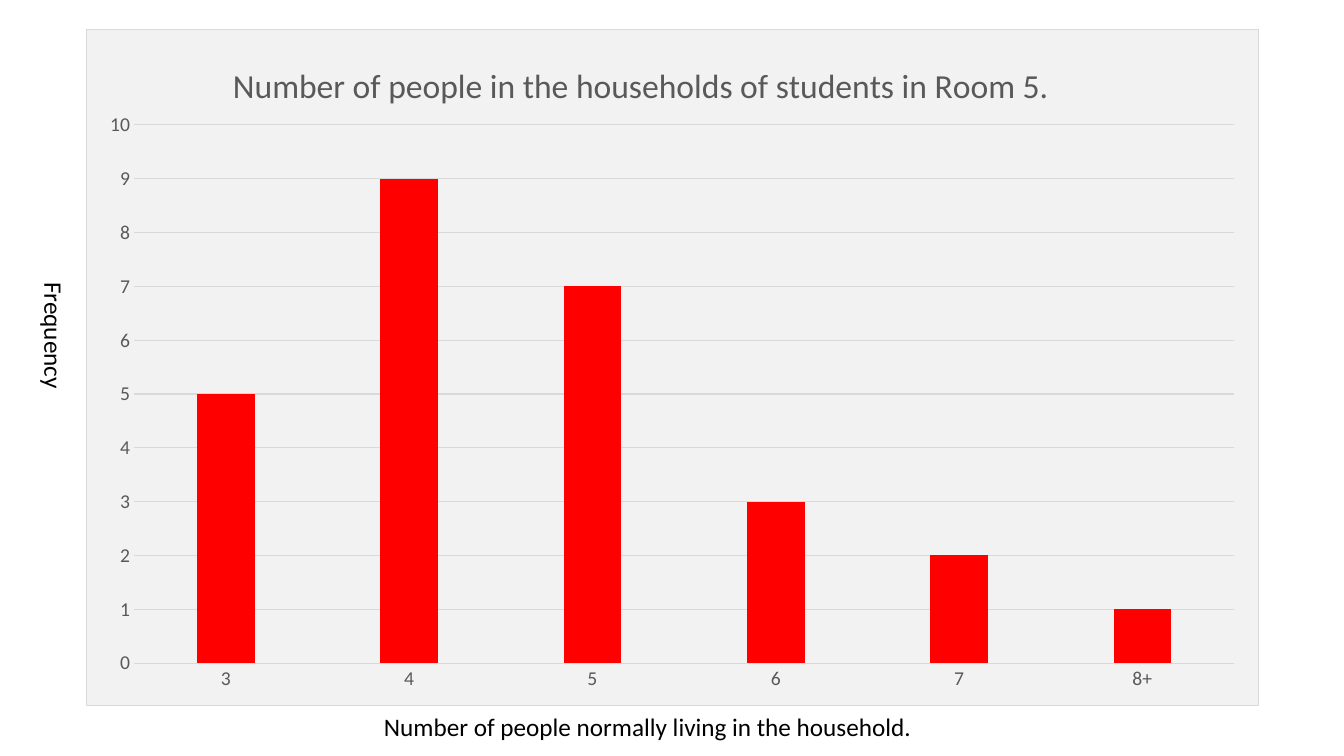
import dataclasses

import lxml.etree
import pptx
import pptx.chart.data
import pptx.dml.color
import pptx.enum.chart
import pptx.enum.text
import pptx.oxml
import pptx.oxml.ns
import pptx.util

Inches = pptx.util.Inches
Pt = pptx.util.Pt
qn = pptx.oxml.ns.qn


@dataclasses.dataclass(frozen=True)
class Theme:
    font: str = "Calibri"
    ink: str = "000000"
    muted: str = "595959"
    rule: str = "D9D9D9"
    panel: str = "F2F2F2"
    bar: str = "FF0000"
    title_size: int = 24
    label_size: int = 18
    tick_size: int = 14
    rule_width: float = 0.75


THEME = Theme()
HOUSEHOLDS = {"3": 5, "4": 9, "5": 7, "6": 3, "7": 2, "8+": 1}


def color(value):
    return pptx.dml.color.RGBColor.from_string(value)


def set_font(font, size, value):
    font.name = THEME.font
    font.size = Pt(size)
    font.bold = False
    font.color.rgb = color(value)


def set_rule(line):
    line.color.rgb = color(THEME.rule)
    line.width = Pt(THEME.rule_width)


def manual_layout(parent, position, **settings):
    for old_layout in parent.findall(qn("c:layout")):
        parent.remove(old_layout)
    layout = lxml.etree.Element(qn("c:layout"))
    manual = lxml.etree.SubElement(layout, qn("c:manualLayout"))
    for name, value in settings.items():
        lxml.etree.SubElement(manual, qn(f"c:{name}")).set("val", str(value))
    parent.insert(position, layout)


def panel_format(chart):
    namespaces = pptx.oxml.ns.nsdecls("c", "a")
    properties = pptx.oxml.parse_xml(
        f"<c:spPr {namespaces}>"
        f'<a:solidFill><a:srgbClr val="{THEME.panel}"/></a:solidFill>'
        f'<a:ln w="{Pt(THEME.rule_width)}"><a:solidFill>'
        f'<a:srgbClr val="{THEME.rule}"/></a:solidFill></a:ln></c:spPr>'
    )
    chart._chartSpace.find(qn("c:chart")).addnext(properties)


def format_axes(chart):
    for axis in (chart.category_axis, chart.value_axis):
        axis.major_tick_mark = pptx.enum.chart.XL_TICK_MARK.NONE
        axis.minor_tick_mark = pptx.enum.chart.XL_TICK_MARK.NONE
        set_font(axis.tick_labels.font, THEME.tick_size, THEME.muted)
    set_rule(chart.category_axis.format.line)
    value_axis = chart.value_axis
    value_axis.minimum_scale = 0
    value_axis.maximum_scale = 10
    value_axis.major_unit = 1
    value_axis.format.line.fill.background()
    set_rule(value_axis.major_gridlines.format.line)


def add_household_chart(slide, left, top, width, height):
    data = pptx.chart.data.CategoryChartData()
    data.categories = list(HOUSEHOLDS)
    data.add_series("Series 1", list(HOUSEHOLDS.values()))
    chart = slide.shapes.add_chart(
        pptx.enum.chart.XL_CHART_TYPE.COLUMN_CLUSTERED,
        Inches(left), Inches(top), Inches(width), Inches(height), data,
    ).chart
    set_font(chart.font, 10, THEME.ink)
    panel_format(chart)
    chart.has_legend = False

    chart.has_title = True
    paragraph = chart.chart_title.text_frame.paragraphs[0]
    paragraph.text = "Number of people in the households of students in Room 5."
    set_font(paragraph.font, THEME.title_size, THEME.muted)
    manual_layout(chart.chart_title._element, 1,
                  xMode="edge", yMode="edge", x=0.12, y=0.04)

    plot = chart.plots[0]
    plot.gap_width = 219
    plot.overlap = -27
    plot.vary_by_categories = False
    fill = plot.series[0].format.fill
    fill.solid()
    fill.fore_color.rgb = color(THEME.bar)
    format_axes(chart)
    plot_area = chart._chartSpace.find(qn("c:chart")).find(qn("c:plotArea"))
    manual_layout(plot_area, 0, layoutTarget="inner", xMode="edge", yMode="edge",
                  x=0.041, y=0.141, w=0.938, h=0.797)


def add_axis_label(slide, text, left, top, width, height, vertical=False):
    frame = slide.shapes.add_textbox(
        Inches(left), Inches(top), Inches(width), Inches(height)
    ).text_frame
    frame.word_wrap = True
    frame.auto_size = pptx.enum.text.MSO_AUTO_SIZE.SHAPE_TO_FIT_TEXT
    if vertical:
        frame._txBody.bodyPr.set("vert", "vert")
    paragraph = frame.paragraphs[0]
    paragraph.text = text
    set_font(paragraph.font, THEME.label_size, THEME.ink)


def main():
    presentation = pptx.Presentation()
    presentation.slide_width = Inches(13.33)
    presentation.slide_height = Inches(7.5)
    slide = presentation.slides.add_slide(presentation.slide_layouts[6])
    add_household_chart(slide, 0.85, 0.29, 11.64, 6.71)
    add_axis_label(slide, "Number of people normally living in the household.",
                   3.71, 7.01, 7.75, 0.4)
    add_axis_label(slide, "Frequency", 0.24, 2.7, 0.5, 1.29, vertical=True)
    presentation.save("out.pptx")


if __name__ == "__main__":
    main()
